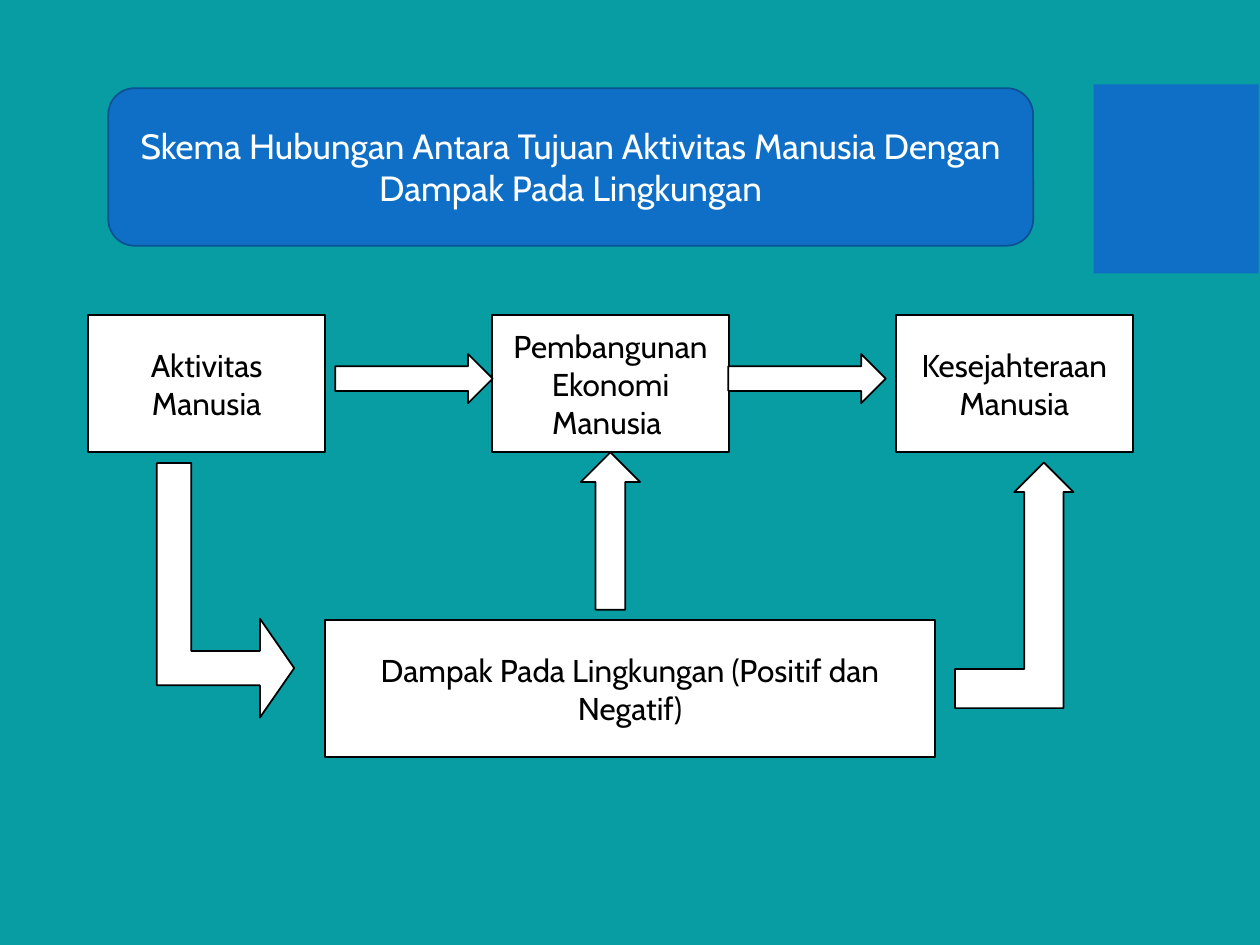
from pptx import Presentation
from pptx.dml.color import RGBColor
from pptx.enum.shapes import MSO_SHAPE
from pptx.enum.text import MSO_ANCHOR, PP_ALIGN
from pptx.util import Inches, Pt

RECTANGLE = MSO_SHAPE.RECTANGLE
ROUNDED = MSO_SHAPE.ROUNDED_RECTANGLE
RIGHT_ARROW = MSO_SHAPE.RIGHT_ARROW
BENT_ARROW = MSO_SHAPE.BENT_UP_ARROW
MIDDLE = MSO_ANCHOR.MIDDLE
CENTER = PP_ALIGN.CENTER

TEAL = RGBColor(0x08, 0x9C, 0xA3)
BLUE = RGBColor(0x0F, 0x6F, 0xC6)
NAVY = RGBColor(0x0B, 0x52, 0x92)
WHITE = RGBColor(0xFF, 0xFF, 0xFF)
BLACK = RGBColor(0x00, 0x00, 0x00)

NODE_WIDTH, NODE_HEIGHT = 1.88, 1.09
NODE_LEFT, NODE_TOP, NODE_STEP = 0.7, 2.5, 3.205
ACTIVITIES = ["Aktivitas Manusia", "Pembangunan Ekonomi Manusia ", "Kesejahteraan Manusia"]
IMPACT = "Dampak Pada Lingkungan (Positif dan Negatif)"
TITLE = "Skema Hubungan Antara Tujuan Aktivitas Manusia Dengan Dampak Pada Lingkungan"


def add_block(page, kind, box, fill=WHITE, line=BLACK):
    block = page.shapes.add_shape(kind, *map(Inches, box))
    block.shadow.inherit = False
    block.fill.solid()
    block.fill.fore_color.rgb = fill
    if line is None:
        block.line.fill.background()
    else:
        block.line.color.rgb = line
        block.line.width = Pt(1)
    return block


def write_text(block, text, size, color):
    frame = block.text_frame
    frame.word_wrap = True
    frame.vertical_anchor = MIDDLE
    para = frame.paragraphs[0]
    para.alignment = CENTER
    span = para.add_run()
    span.text = text
    for name, value in {"name": "Cabin", "size": Pt(size)}.items():
        setattr(span.font, name, value)
    span.font.color.rgb = color


def add_node(page, box, text):
    write_text(add_block(page, RECTANGLE, box), text, 18, BLACK)


def add_arrow(page, kind, box, rotation=0, adjustments=()):
    arrow = add_block(page, kind, box)
    arrow.rotation = rotation
    for index, value in enumerate(adjustments):
        arrow.adjustments[index] = value


def add_title(page, box):
    write_text(add_block(page, ROUNDED, box, BLUE, NAVY), TITLE, 20, WHITE)


def add_activities(page, box):
    left, top, width, height = box
    for index, text in enumerate(ACTIVITIES):
        add_node(page, (left + index * NODE_STEP, top, width, height), text)


def add_arrows(page):
    for left in (2.66, 5.78):
        add_arrow(page, RIGHT_ARROW, (left, 2.81, 1.25, 0.39))
    add_arrow(page, RIGHT_ARROW, (4.22, 3.98, 1.25, 0.47), 270)
    add_arrow(page, BENT_ARROW, (7.58, 3.67, 0.94, 1.95), 0, (0.33, 0.25, 0.25))
    add_arrow(page, BENT_ARROW, (0.78, 4.14, 2.02, 1.09), 90, (0.25, 0.36, 0.25))


def main():
    deck = Presentation()
    deck.slide_width, deck.slide_height = Inches(10), Inches(7.5)
    page = deck.slides.add_slide(deck.slide_layouts[6])
    page.background.fill.solid()
    page.background.fill.fore_color.rgb = TEAL
    add_block(page, RECTANGLE, (8.68, 0.67, 1.31, 1.5), BLUE, None)
    add_activities(page, (NODE_LEFT, NODE_TOP, NODE_WIDTH, NODE_HEIGHT))
    add_node(page, (2.58, 4.92, 4.84, NODE_HEIGHT), IMPACT)
    add_arrows(page)
    add_title(page, (0.86, 0.7, 7.34, 1.25))
    deck.save("out.pptx")


if __name__ == "__main__":
    main()
